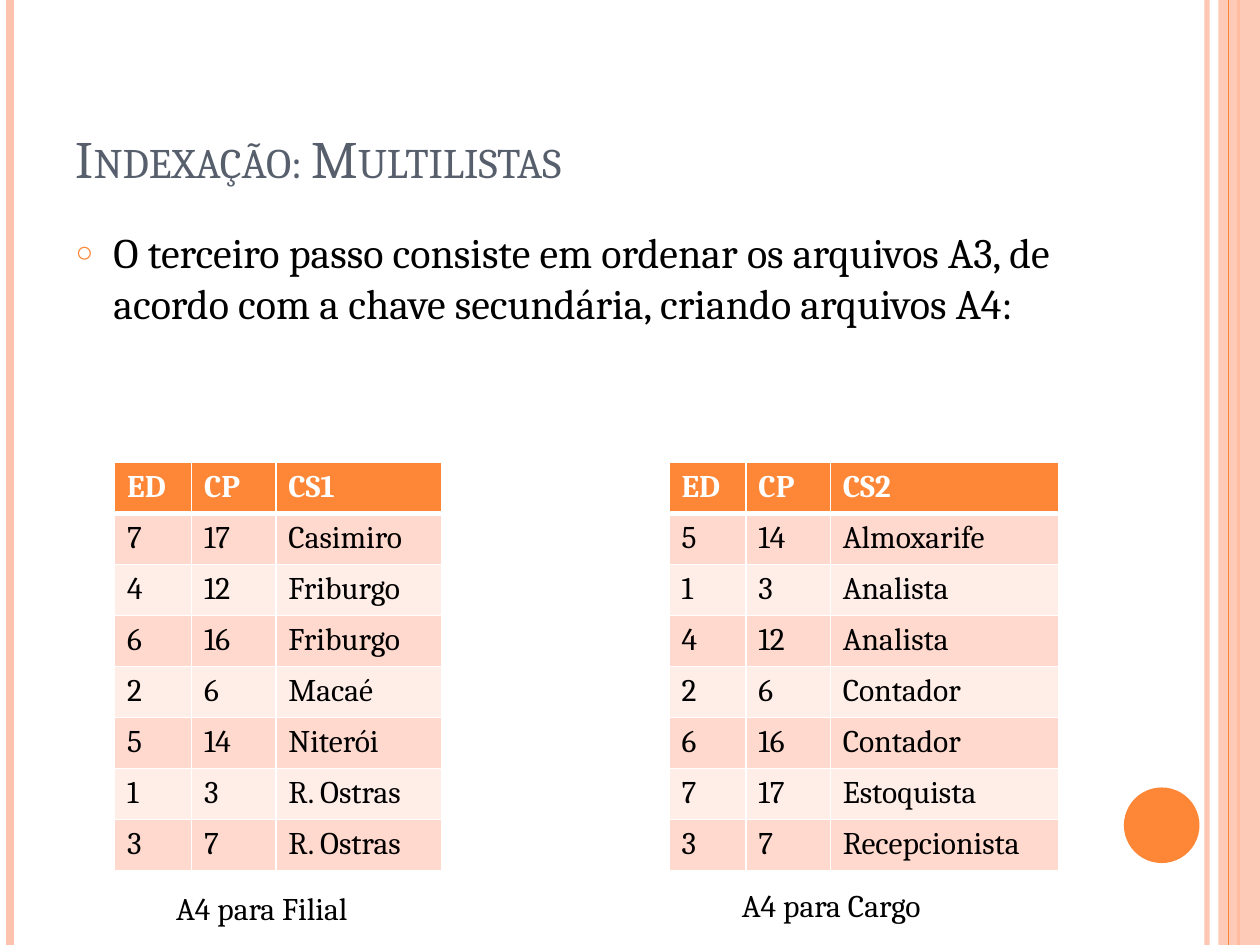
from lxml.etree import SubElement as Sub
from pptx import Presentation
from pptx.dml.color import RGBColor
from pptx.enum.shapes import MSO_CONNECTOR as Conn, MSO_SHAPE as Kind
from pptx.enum.text import MSO_ANCHOR as Anchor, MSO_AUTO_SIZE as Fit, PP_ALIGN as Align
from pptx.oxml.ns import qn
from pptx.util import Inches, Pt

COLS, ROWS = 100, 75
FILIAL = [("ED", "CP", "CS1"), (7, 17, "Casimiro"), (4, 12, "Friburgo"),
          (6, 16, "Friburgo"), (2, 6, "Macaé"), (5, 14, "Niterói"),
          (1, 3, "R. Ostras"), (3, 7, "R. Ostras")]
CARGO = [("ED", "CP", "CS2"), (5, 14, "Almoxarife"), (1, 3, "Analista"),
         (4, 12, "Analista"), (2, 6, "Contador"), (6, 16, "Contador"),
         (7, 17, "Estoquista"), (3, 7, "Recepcionista")]


def tint(code):
    """Turn a hex string into a colour."""
    return RGBColor.from_string(code)


class Deck:
    """Hold the style and the current slide, on a grid of 100 by 75 cells."""

    face, ink, slate, white = "Cambria", "000000", "575F6D", "FFFFFF"
    main, pale, bands = "FE8637", "FEC3AE", ("FFEDE8", "FFD9CE")

    def __init__(self):
        """Open a deck with one title and body slide."""
        self.deck = Presentation()
        self.deck.slide_width, self.deck.slide_height = Inches(10), Inches(7.5)
        self.slide = self.deck.slides.add_slide(self.deck.slide_layouts[1])
        self.shapes = self.slide.shapes

    def span(self, *cells):
        """Turn grid cells into lengths, across and down in turn."""
        unit = self.deck.slide_width / COLS, self.deck.slide_height / ROWS
        return [round(n * unit[i % 2]) for i, n in enumerate(cells)]

    def font(self, para, size, code, bold=False):
        """Set the font of a paragraph."""
        font = para.font
        font.name, font.size, font.bold = self.face, Pt(size), bold
        font.color.rgb = tint(code)

    def fade(self, shape, share):
        """Make the colour of a shape partly clear."""
        node = next(shape._element.spPr.iter(qn("a:srgbClr")))
        Sub(node, qn("a:alpha"), val=str(share * 1000))

    def rule(self, x, code, width, share=100):
        """Draw a line down the whole slide."""
        line = self.shapes.add_connector(Conn.STRAIGHT, *self.span(x, 0, x, ROWS))
        line.line.color.rgb, line.line.width = tint(code), Pt(width)
        if share < 100:
            self.fade(line, share)
        Sub(line._element.spPr, qn("a:effectLst"))

    def shape(self, kind, box, code, share=100):
        """Draw a plain filled shape."""
        shape = self.shapes.add_shape(kind, *self.span(*box))
        shape.shadow.inherit = False
        shape.fill.solid()
        shape.fill.fore_color.rgb = tint(code)
        shape.line.fill.background()
        if share < 100:
            self.fade(shape, share)

    def place(self, holder, box, text, size, code):
        """Move and fill a placeholder, and give back its paragraph."""
        holder.left, holder.top, holder.width, holder.height = self.span(*box)
        frame = holder.text_frame
        frame.text, frame.auto_size = text, Fit.NONE
        para = frame.paragraphs[0]
        para.alignment = Align.LEFT
        self.font(para, size, code)
        return para

    def title(self, box, text):
        """Set the title in small capitals."""
        holder = self.shapes.title
        para = self.place(holder, box, text, 30, self.slate)
        holder.text_frame.vertical_anchor = Anchor.BOTTOM
        para.runs[0].font._element.set("cap", "small")

    def body(self, box, text):
        """Set the list with its ring bullet."""
        para = self.place(self.slide.placeholders[1], box, text, 24, self.ink)
        para.space_before = Pt(6)
        props = para._p.get_or_add_pPr()
        props.set("marL", str(Inches(0.3)))
        props.set("indent", str(-Inches(0.3)))
        marks = [Sub(props, qn("a:buClr")),
                 Sub(props, qn("a:buSzPct"), val="70000"),
                 Sub(props, qn("a:buChar"), char="○")]
        Sub(marks[0], qn("a:srgbClr"), val=self.main)
        last = props.find(qn("a:defRPr"))
        for mark in marks:
            last.addprevious(mark)

    def edge(self, cell, head):
        """Draw white borders round a cell."""
        props = cell._tc.get_or_add_tcPr()
        for side in "LRTB":
            width = Pt(3 if head and side == "B" else 1)
            line = Sub(props, qn("a:ln" + side), w=str(width))
            Sub(Sub(line, qn("a:solidFill")), qn("a:srgbClr"), val=self.white)

    def table(self, x, y, wide, tall, data):
        """Draw a banded table."""
        box = self.span(x, y, sum(wide), tall * len(data))
        table = self.shapes.add_table(len(data), len(wide), *box).table
        for col, width in zip(table.columns, wide):
            col.width = self.span(width)[0]
        for i, row in enumerate(data):
            table.rows[i].height = self.span(0, tall)[1]
            for j, item in enumerate(row):
                cell, head = table.cell(i, j), i == 0
                cell.text = str(item)
                self.font(cell.text_frame.paragraphs[0], 18,
                          self.white if head else self.ink, head)
                self.edge(cell, head)
                cell.fill.solid()
                cell.fill.fore_color.rgb = tint(self.main if head else self.bands[i % 2])

    def label(self, box, text):
        """Write a caption on one line."""
        frame = self.shapes.add_textbox(*self.span(*box)).text_frame
        frame.text, frame.word_wrap = text, False
        frame.auto_size = Fit.SHAPE_TO_FIT_TEXT
        self.font(frame.paragraphs[0], 18, self.ink)

    def frame(self):
        """Draw the stripes and the disc at the slide's sides."""
        self.rule(95.8, self.pale, 3, 93)
        self.rule(0.8, self.pale, 4.5)
        self.rule(98.3, self.main, 1.5)
        self.shape(Kind.RECTANGLE, (96.7, 0, 3.3, ROWS), self.pale, 87)
        self.rule(97.5, self.main, 0.75)
        self.shape(Kind.OVAL, (89.2, 62.5, 6, 6), self.main)


def main():
    """Build and save the slide."""
    deck = Deck()
    deck.frame()
    deck.title((5, 3, 81.7, 12.5), "Indexação: Multilistas")
    deck.body((5, 17.5, 81.7, 53.3), "O terceiro passo consiste em ordenar os arquivos A3, "
              "de acordo com a chave secundária, criando arquivos A4:")
    for x, last, data in ((9.1, 13.2, FILIAL), (53.1, 18.1, CARGO)):
        deck.table(x, 36.7, (6.1, 6.7, last), 4.05, data)
    deck.label((13, 70.1, 18.3, 4), "A4 para Filial")
    deck.label((57.9, 69.8, 19, 4), "A4 para Cargo")
    deck.deck.save("out.pptx")


if __name__ == "__main__":
    main()
